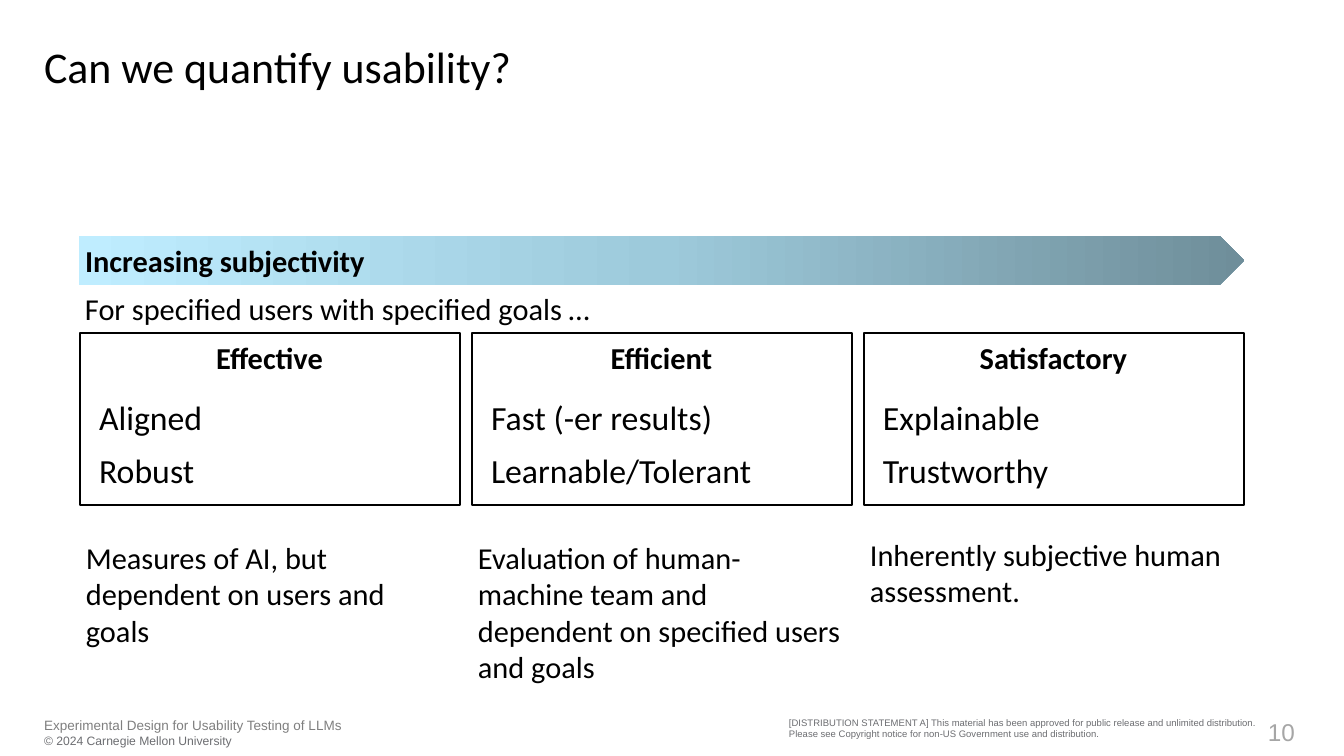
"""Build a slide on quantifying usability along a scale of subjectivity."""
import copy

import pptx
import pptx.dml.color
import pptx.enum.shapes
import pptx.enum.text
import pptx.oxml.ns
import pptx.util

PX = 914400 / 121.5
COLORS = {"black": "000000", "white": "FFFFFF", "footer": "7F7F7F", "legal": "6C6D71",
          "number": "A6A6A6", "light": "BFEDFF", "middle": "9DCADB", "dark": "6F8E9A"}
ALIGN = pptx.enum.text.PP_ALIGN
SHAPES = pptx.enum.shapes.MSO_SHAPE


def px(*lengths):
    return [pptx.util.Emu(round(length * PX)) for length in lengths]


def write(frame, text, size, color="black", font="Calibri", bold=False,
          align=ALIGN.LEFT, inset=0, wrap=True):
    frame.word_wrap = wrap
    margin = px(inset)[0]
    frame.margin_left = frame.margin_top = frame.margin_right = frame.margin_bottom = margin
    paragraph = frame.paragraphs[0]
    paragraph.alignment = align
    paragraph.font.name = font
    paragraph.font.size = pptx.util.Pt(size)
    paragraph.font.bold = bold
    paragraph.font.color.rgb = pptx.dml.color.RGBColor.from_string(COLORS[color])
    paragraph.add_run().text = text
    return paragraph


deck = pptx.Presentation()
deck.slide_width, deck.slide_height = px(1344, 756)
slide = deck.slides.add_slide(deck.slide_layouts[6])
shapes = slide.shapes

title = shapes.add_textbox(*px(44, 40, 1145, 100))
write(title.text_frame, "Can we quantify usability?", 26)

scale = shapes.add_shape(SHAPES.RIGHT_ARROW, *px(79, 236, 1165, 49))
scale.shadow.inherit = False
scale.adjustments[0], scale.adjustments[1] = 1, 0.5
scale.line.fill.background()
scale.fill.gradient()
scale.fill.gradient_angle = 0
stop_list = scale._element.spPr.find(".//" + pptx.oxml.ns.qn("a:gsLst"))
stop_list.insert(1, copy.deepcopy(stop_list[0]))
for stop, position, shade in zip(scale.fill.gradient_stops, (0, 0.5, 1),
                                 ("light", "middle", "dark")):
    stop.position = position
    stop.color.rgb = pptx.dml.color.RGBColor.from_string(COLORS[shade])
write(scale.text_frame, "Increasing subjectivity", 18, bold=True, inset=6)
scale.text_frame.vertical_anchor = pptx.enum.text.MSO_ANCHOR.MIDDLE

condition = shapes.add_textbox(*px(79, 284, 532, 49))
write(condition.text_frame, "For specified users with specified goals …", 18, inset=6, wrap=False)

qualities = [
    ("Effective", 123, ("Aligned", "Robust"),
     "Measures of AI, but dependent on users and goals", 533, 123),
    ("Efficient", 117, ("Fast (-er results)", "Learnable/Tolerant"),
     "Evaluation of human-machine team and dependent on specified users and goals", 533, 159),
    ("Satisfactory", 163, ("Explainable", "Trustworthy"),
     "Inherently subjective human assessment.", 530, 86),
]
for column, (heading, heading_width, traits, remark, remark_top, remark_height) in enumerate(qualities):
    left = 80 + 392 * column
    card = shapes.add_shape(SHAPES.RECTANGLE, *px(left, 333, 380, 172))
    card.shadow.inherit = False
    card.fill.solid()
    card.fill.fore_color.rgb = pptx.dml.color.RGBColor.from_string(COLORS["white"])
    card.line.color.rgb = pptx.dml.color.RGBColor.from_string(COLORS["black"])
    card.line.width = pptx.util.Pt(1)

    heading_left = left + (380 - heading_width) // 2
    label = shapes.add_textbox(*px(heading_left, 333, heading_width, 49))
    write(label.text_frame, heading, 18, bold=True, align=ALIGN.CENTER, inset=6, wrap=False)
    for row, trait in enumerate(traits):
        entry = shapes.add_textbox(*px(left + 19, 397 + 53 * row, 328, 41))
        write(entry.text_frame, trait, 20)
    explanation = shapes.add_textbox(*px(left, remark_top, 380, remark_height))
    write(explanation.text_frame, remark, 18, inset=6)

footer = shapes.add_textbox(*px(44, 717, 547, 32))
credit = write(footer.text_frame, "Experimental Design for Usability Testing of LLMs",
               8, "footer", "Arial")
credit.add_line_break()
rights = credit.add_run()
rights.text = "© 2024 Carnegie Mellon University"
rights.font.size = pptx.util.Pt(7.2)
rights.font.color.rgb = pptx.dml.color.RGBColor.from_string(COLORS["legal"])

distribution = shapes.add_textbox(*px(789, 717, 469, 30))
write(distribution.text_frame,
      "[DISTRIBUTION STATEMENT A] This material has been approved for public release and "
      "unlimited distribution. Please see Copyright notice for non-US Government use and "
      "distribution.", 5.6, "legal", "Arial")

page_number = shapes.add_textbox(*px(1214, 717, 81, 30))
write(page_number.text_frame, "10", 14.4, "number", "Arial", align=ALIGN.RIGHT)

deck.save("out.pptx")
